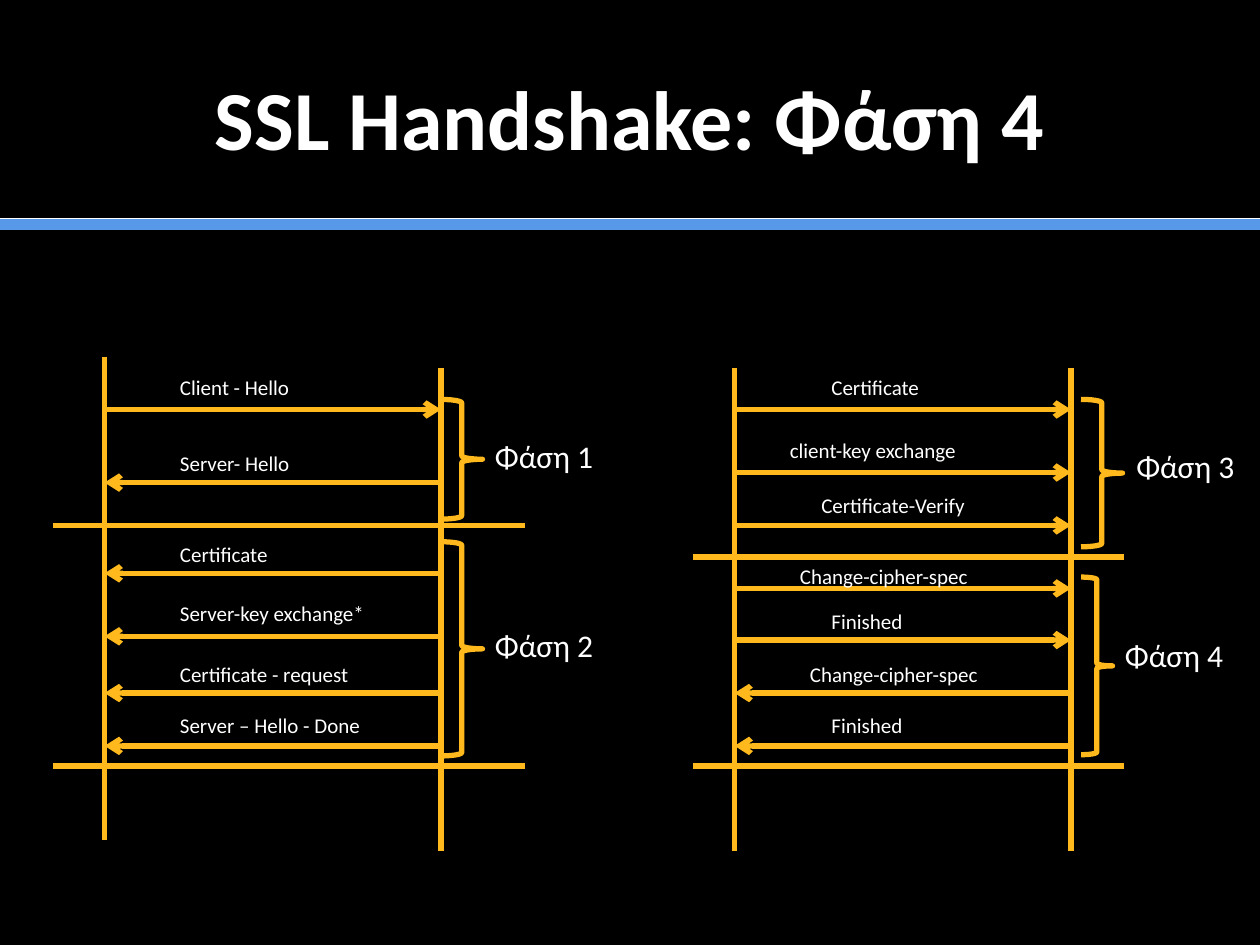
from lxml import etree
from pptx import Presentation
from pptx import util as u
from pptx.dml.color import RGBColor
from pptx.enum import shapes, text
from pptx.oxml.ns import qn

PX = 9144  # EMU per px, 100 px to the inch
HUES = {"back": "000000", "ink": "FFFFFF", "bar": "5799E8", "gold": "FFB91D"}


def hue(name):
    return RGBColor.from_string(HUES[name])


class Deck:
    """Holds the style and the current slide."""
    font = "Calibri"
    wide = 3

    def __init__(self):
        self.prs = Presentation()
        self.prs.slide_width, self.prs.slide_height = 1000 * PX, 750 * PX
        self.slide = self.prs.slides.add_slide(self.prs.slide_layouts[5])
        fill = self.slide.background.fill
        fill.solid()
        fill.fore_color.rgb = hue("back")

    def add_text(self, para, words, size, bold=False):
        run = para.add_run()
        run.text = words
        font = run.font
        font.name, font.size, font.bold = self.font, u.Pt(size), bold
        font.color.rgb = hue("ink")

    def title(self, words, x, y, w, h):
        box = self.slide.shapes.title
        box.left, box.top, box.width, box.height = (n * PX for n in (x, y, w, h))
        box.text_frame.vertical_anchor = text.MSO_ANCHOR.MIDDLE
        para = box.text_frame.paragraphs[0]
        para.alignment = text.PP_ALIGN.CENTER
        self.add_text(para, words, 48, True)

    def label(self, words, x, y, w, h=30, size=12):
        box = self.slide.shapes.add_textbox(*(n * PX for n in (x, y, w, h)))
        frame = box.text_frame
        frame.word_wrap = True
        frame.auto_size = text.MSO_AUTO_SIZE.SHAPE_TO_FIT_TEXT
        self.add_text(frame.paragraphs[0], words, size)

    def line(self, x1, y1, x2, y2, color="gold", wide=wide, arrow=False):
        rule = self.slide.shapes.add_connector(
            shapes.MSO_CONNECTOR.STRAIGHT, *(n * PX for n in (x1, y1, x2, y2)))
        rule.line.color.rgb = hue(color)
        rule.line.width = u.Pt(wide)
        props = rule._element.spPr
        if arrow:
            end = etree.SubElement(props.find(qn("a:ln")), qn("a:tailEnd"))
            end.set("type", "arrow")
        etree.SubElement(props, qn("a:effectLst"))

    def brace(self, x, y, w, h):
        mark = self.slide.shapes.add_shape(
            shapes.MSO_SHAPE.RIGHT_BRACE, *(n * PX for n in (x, y, w, h)))
        mark.shadow.inherit = False
        mark.fill.background()
        mark.line.color.rgb = hue("gold")
        mark.line.width = u.Pt(self.wide)

    def phase(self, words, brace, x, y):
        self.brace(*brace)
        self.label(words, x, y, 117, 40, 18)

    def flow(self, client, server, rows):
        """Draw messages; each row is (arrow y, to server?, words, x, y, w)."""
        for level, ahead, words, x, y, w in rows:
            start, end = (client, server) if ahead else (server, client)
            self.line(start, level, end, level, arrow=True)
            self.label(words, x, y, w)


def main():
    deck = Deck()
    deck.line(0, 178, 1000, 178, "bar", 7)
    deck.line(0, 173, 1000, 173, "ink", 0.5)
    deck.title("SSL Handshake: Φάση 4", 50, 30, 900, 125)

    for x, top, base in ((83, 283, 667), (350, 292, 675),
                         (583, 292, 675), (850, 292, 675)):
        deck.line(x, top, x, base)
    for left, right, y in ((42, 417, 417), (42, 417, 608),
                           (550, 892, 442), (550, 892, 608)):
        deck.line(left, y, right, y)

    deck.flow(83, 350, [
        (325, True, "Client - Hello", 133, 292, 158),
        (383, False, "Server- Hello", 133, 353, 158),
        (455, False, "Certificate", 133, 425, 158),
        (505, False, "Server-key exchange*", 133, 472, 216),
        (550, False, "Certificate - request", 133, 520, 216),
        (592, False, "Server – Hello - Done", 133, 561, 216),
    ])
    deck.flow(583, 850, [
        (325, True, "Certificate", 650, 292, 158),
        (375, True, "client-key exchange", 617, 342, 216),
        (417, True, "Certificate-Verify", 642, 386, 158),
        (467, True, "Change-cipher-spec", 625, 442, 208),
        (508, True, "Finished", 650, 478, 158),
        (550, False, "Change-cipher-spec", 633, 520, 208),
        (592, False, "Finished", 650, 561, 158),
    ])

    deck.phase("Φάση 1", (350, 317, 33, 95), 383, 342)
    deck.phase("Φάση 2", (350, 430, 33, 170), 383, 492)
    deck.phase("Φάση 3", (858, 317, 33, 117), 892, 350)
    deck.phase("Φάση 4", (858, 458, 25, 141), 883, 500)
    deck.prs.save("out.pptx")


if __name__ == "__main__":
    main()
